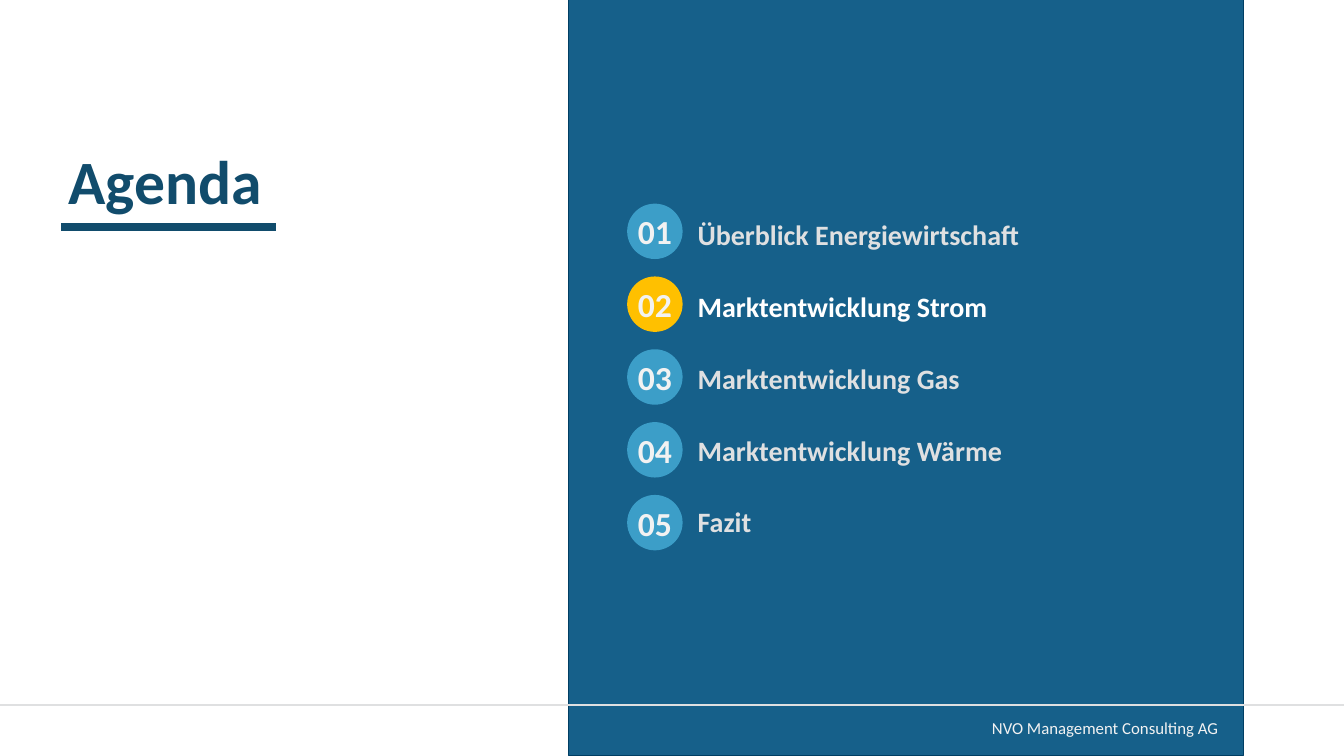
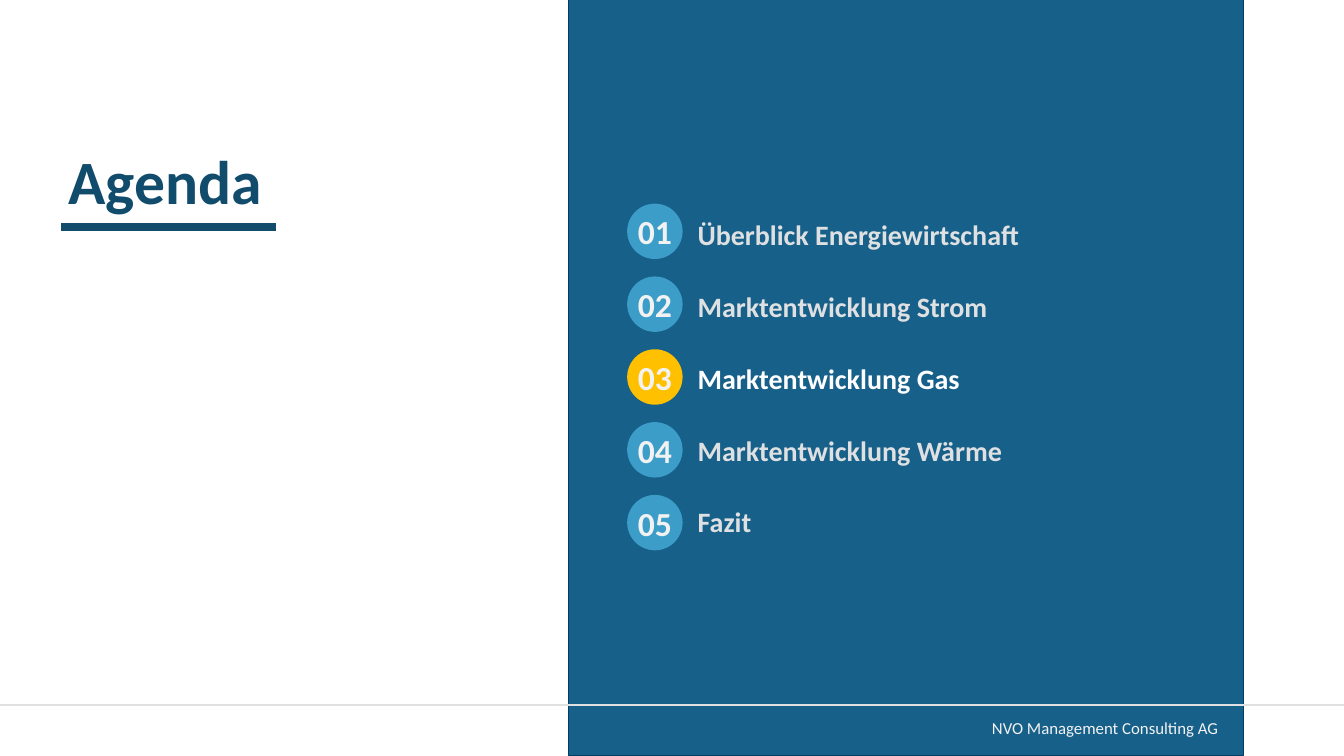
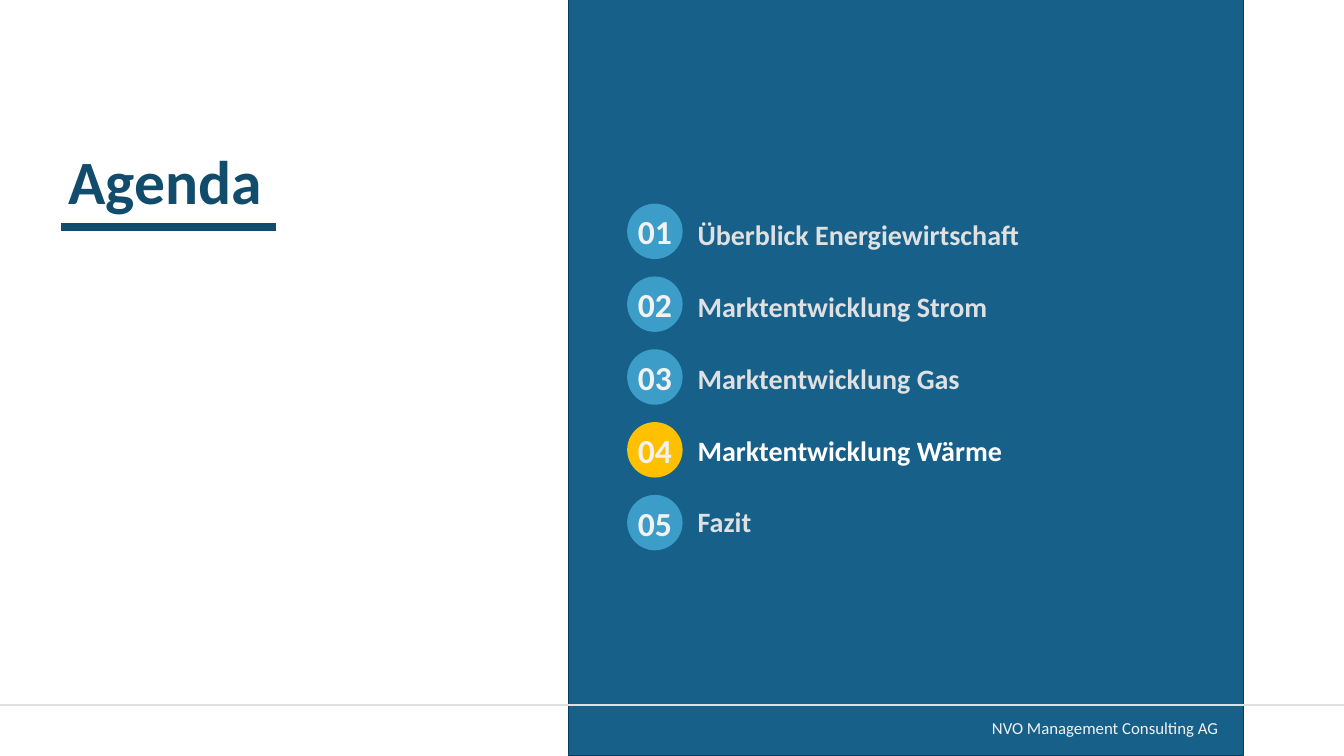
from lxml import etree
from pptx import Presentation
from pptx.dml.color import RGBColor
from pptx.enum.shapes import MSO_CONNECTOR, MSO_SHAPE
from pptx.enum.text import MSO_ANCHOR, PP_ALIGN
from pptx.oxml.ns import qn
from pptx.util import Inches, Pt

RECT, OVAL = MSO_SHAPE.RECTANGLE, MSO_SHAPE.OVAL
STRAIGHT = MSO_CONNECTOR.STRAIGHT
LEFT, CENTER = PP_ALIGN.LEFT, PP_ALIGN.CENTER
TOP, MIDDLE = MSO_ANCHOR.TOP, MSO_ANCHOR.MIDDLE

# Shared style
FONT = "Calibri"
NAVY, PANEL, PANEL_EDGE = "114C6C", "16608A", "003E63"
BLUE, YELLOW = "3C9EC8", "FFC000"
GREY, PALE, WHITE = "DFE0E1", "F2F2F2", "FFFFFF"

SLIDE_W, SLIDE_H = 13.33, 7.5
PANEL_BOX = (5.64, 0, 6.69, SLIDE_H)
FOOTER_Y = 6.99

TITLE = "Agenda"
COMPANY = "NVO Management Consulting AG"
TOPICS = [
    "Überblick Energiewirtschaft",
    "Marktentwicklung Strom",
    "Marktentwicklung Gas",
    "Marktentwicklung Wärme",
    "Fazit",
]
ACTIVE_TOPICS = [2, 3, 4]


def rgb(value):
    return RGBColor.from_string(value)


def inches(*values):
    return [Inches(v) for v in values]


def add_run(p, text, size, color, bold=False):
    r = p.add_run()
    r.text = text
    r.font.name = FONT
    r.font.size = Pt(size)
    r.font.bold = bold
    r.font.color.rgb = rgb(color)


def set_frame(tf, anchor=TOP, align=LEFT):
    tf.word_wrap = True
    tf.vertical_anchor = anchor
    p = tf.paragraphs[0]
    p.alignment = align
    return p


def add_shape(s, kind, box, fill, edge=None):
    sp = s.shapes.add_shape(kind, *inches(*box))
    sp.shadow.inherit = False
    sp.fill.solid()
    sp.fill.fore_color.rgb = rgb(fill)
    if edge:
        sp.line.color.rgb = rgb(edge)
        sp.line.width = Pt(0.75)
    else:
        sp.line.fill.background()
    return sp


def add_rule(s, x, y, width, color, weight):
    line = s.shapes.add_connector(STRAIGHT, *inches(x, y, x + width, y))
    line.line.color.rgb = rgb(color)
    line.line.width = Pt(weight)
    etree.SubElement(line._element.spPr, qn("a:effectLst"))


def add_title(s, x, y, width, height):
    title = s.shapes.title
    title.left, title.top, title.width, title.height = inches(x, y, width, height)
    p = set_frame(title.text_frame, MIDDLE)
    add_run(p, TITLE, 44, NAVY, bold=True)
    add_rule(s, x + 0.03, y + height, 2.13, NAVY, 6)


def add_footer(s, panel):
    right = panel[0] + panel[2]
    add_rule(s, 0, FOOTER_Y, SLIDE_W, GREY, 1.5)
    tb = s.shapes.add_textbox(*inches(right - 2.59, FOOTER_Y + 0.08, 2.49, 0.3))
    add_run(set_frame(tb.text_frame), COMPANY, 12, PALE)


def add_badge(s, x, y, number, active):
    badge = add_shape(s, OVAL, (x, y, 0.55, 0.55), YELLOW if active else BLUE)
    tf = badge.text_frame
    tf.margin_left = tf.margin_right = tf.margin_top = tf.margin_bottom = 0
    add_run(set_frame(tf, MIDDLE, CENTER), f"{number:02d}", 24, PALE, bold=True)


def add_topics(s, panel, active):
    left, top, width, _ = panel
    first_y, pitch = 2.02, 0.7225

    # Topic list, one paragraph per topic
    tb = s.shapes.add_textbox(*inches(left + 1.18, top + 1.78, width - 1.18, 5.2))
    tf = tb.text_frame
    p = set_frame(tf)
    for i, topic in enumerate(TOPICS):
        if i:
            p = tf.add_paragraph()
        p.line_spacing = 2.0
        p.space_before = Pt(3.2)
        add_run(p, topic, 20, WHITE if i + 1 == active else GREY, bold=True)

    # Numbered badges
    for i in range(len(TOPICS)):
        add_badge(s, left + 0.58, top + first_y + i * pitch, i + 1, i + 1 == active)


def add_agenda_slide(prs, active):
    s = prs.slides.add_slide(prs.slide_layouts[5])
    add_shape(s, RECT, PANEL_BOX, PANEL, PANEL_EDGE)
    add_title(s, 0.58, 1.31, 2.99, 0.94)
    add_footer(s, PANEL_BOX)
    add_topics(s, PANEL_BOX, active)


def main():
    prs = Presentation()
    prs.slide_width, prs.slide_height = inches(SLIDE_W, SLIDE_H)
    for active in ACTIVE_TOPICS:
        add_agenda_slide(prs, active)
    prs.save("out.pptx")


if __name__ == "__main__":
    main()
